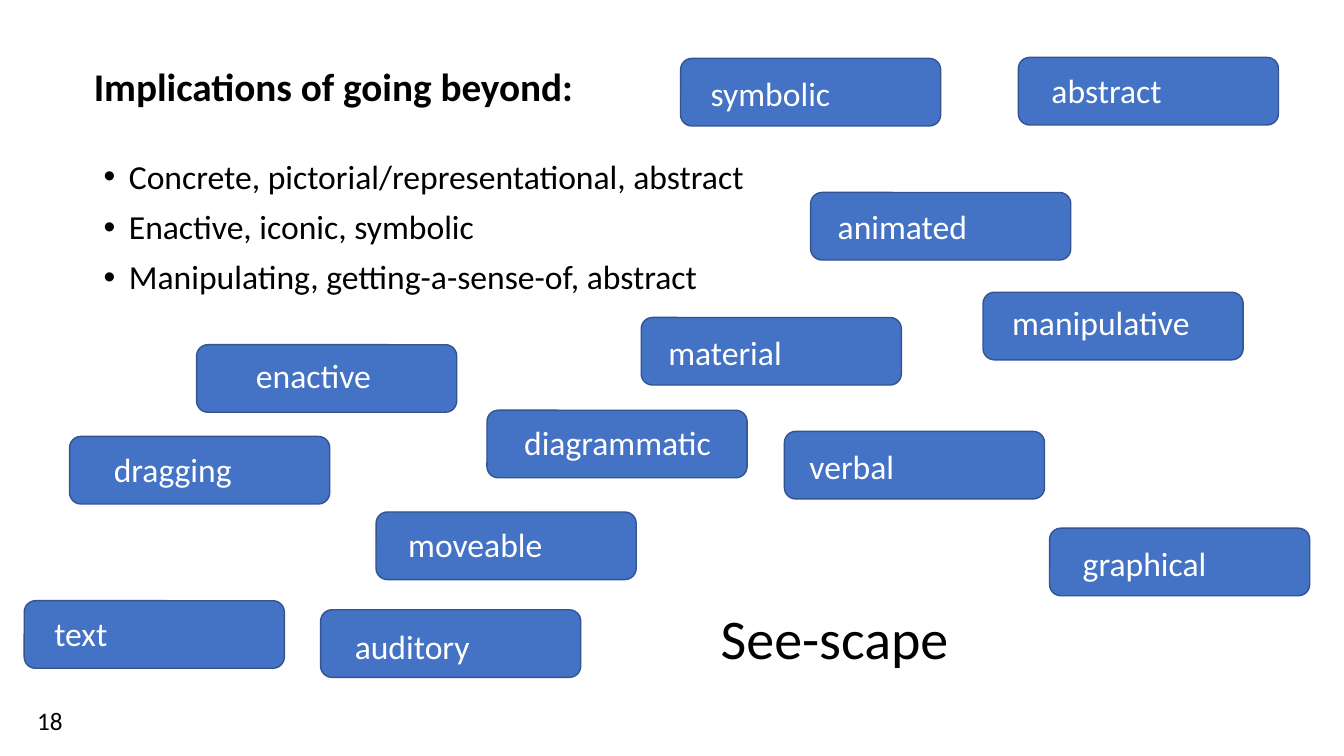
import pptx
import pptx.util
import pptx.dml.color
import pptx.enum.shapes
import pptx.enum.text
import pptx.oxml.ns
from lxml import etree

Inches, Pt = pptx.util.Inches, pptx.util.Pt
RGBColor = pptx.dml.color.RGBColor
ANCHOR = pptx.enum.text.MSO_ANCHOR
BLACK = RGBColor(0x00, 0x00, 0x00)
WHITE = RGBColor(0xFF, 0xFF, 0xFF)
BLUE = RGBColor(0x44, 0x72, 0xC4)
DARK_BLUE = RGBColor(0x32, 0x54, 0x91)
FONT = "Calibri"

TITLE = "Implications of going beyond:"
BULLETS = [
    "Concrete, pictorial/representational, abstract",
    "Enactive, iconic, symbolic",
    "Manipulating, getting-a-sense-of, abstract",
]
CARD_SIZE = (2.58, 0.67)
LABEL_SIZE = (2.15, 0.5)
# word, card left and top, label left and top
CARDS = [
    ("enactive", (1.95, 3.42), (2.44, 3.47)),
    ("graphical", (10.41, 5.24), (10.64, 5.34)),
    ("material", (6.36, 3.15), (6.53, 3.24)),
    ("verbal", (7.78, 4.28), (7.93, 4.37)),
    ("diagrammatic", (4.83, 4.07), (5.1, 4.14)),
    ("dragging", (0.69, 4.33), (1.03, 4.4)),
    ("moveable", (3.73, 5.08), (3.95, 5.15)),
    ("manipulative", (9.75, 2.9), (9.94, 2.95)),
    ("auditory", (3.18, 6.05), (3.42, 6.16)),
    ("text", (0.24, 5.96), (0.44, 6.03)),
    ("animated", (8.04, 1.91), (8.21, 1.99)),
    ("symbolic", (6.75, 0.58), (6.95, 0.67)),
    ("abstract", (10.1, 0.57), (10.33, 0.64)),
]


def add_run(p, text, size, color, bold=False):
    r = p.add_run()
    r.text = text
    r.font.name = FONT
    r.font.size = Pt(size)
    r.font.bold = bold
    r.font.color.rgb = color


def add_text(s, box, text, size, color=BLACK):
    sp = s.shapes.add_textbox(*map(Inches, box))
    tf = sp.text_frame
    tf.word_wrap = True
    add_run(tf.paragraphs[0], text, size, color)


def add_title(s):
    sp = s.shapes.title
    sp.left, sp.top, sp.width, sp.height = map(Inches, (0.83, 0.16, 11.5, 1.45))
    tf = sp.text_frame
    tf.vertical_anchor = ANCHOR.MIDDLE
    p = tf.paragraphs[0]
    p.alignment = pptx.enum.text.PP_ALIGN.LEFT
    p.line_spacing = 0.9
    add_run(p, TITLE, 28, BLACK, bold=True)


def add_bullets(s):
    sp = s.shapes.add_textbox(*map(Inches, (0.93, 1.54, 11.5, 4.76)))
    tf = sp.text_frame
    tf.word_wrap = True
    for i, text in enumerate(BULLETS):
        p = tf.add_paragraph() if i else tf.paragraphs[0]
        p.line_spacing = 0.9
        p.space_before = Pt(10)
        pPr = p._p.get_or_add_pPr()
        pPr.set("marL", str(Inches(0.25)))
        pPr.set("indent", str(Inches(-0.25)))
        qn = pptx.oxml.ns.qn
        etree.SubElement(pPr, qn("a:buFont")).set("typeface", "Arial")
        etree.SubElement(pPr, qn("a:buChar")).set("char", "•")
        add_run(p, text, 24, BLACK)


def add_card(s, word, card_at, label_at):
    kind = pptx.enum.shapes.MSO_SHAPE.FLOWCHART_ALTERNATE_PROCESS
    sp = s.shapes.add_shape(kind, *map(Inches, card_at + CARD_SIZE))
    sp.shadow.inherit = False
    sp.fill.solid()
    sp.fill.fore_color.rgb = BLUE
    sp.line.color.rgb = DARK_BLUE
    sp.line.width = Pt(1)
    add_text(s, label_at + LABEL_SIZE, word, 24, WHITE)


def main():
    prs = pptx.Presentation()
    prs.slide_width, prs.slide_height = Inches(13.33), Inches(7.5)
    s = prs.slides.add_slide(prs.slide_layouts[5])
    add_title(s)
    add_bullets(s)
    for card in CARDS:
        add_card(s, *card)
    add_text(s, (7.05, 5.94, 2.64, 0.77), "See-scape", 40)
    add_text(s, (0.27, 6.95, 0.65, 0.4), "18", 18)
    prs.save("out.pptx")


if __name__ == "__main__":
    main()
